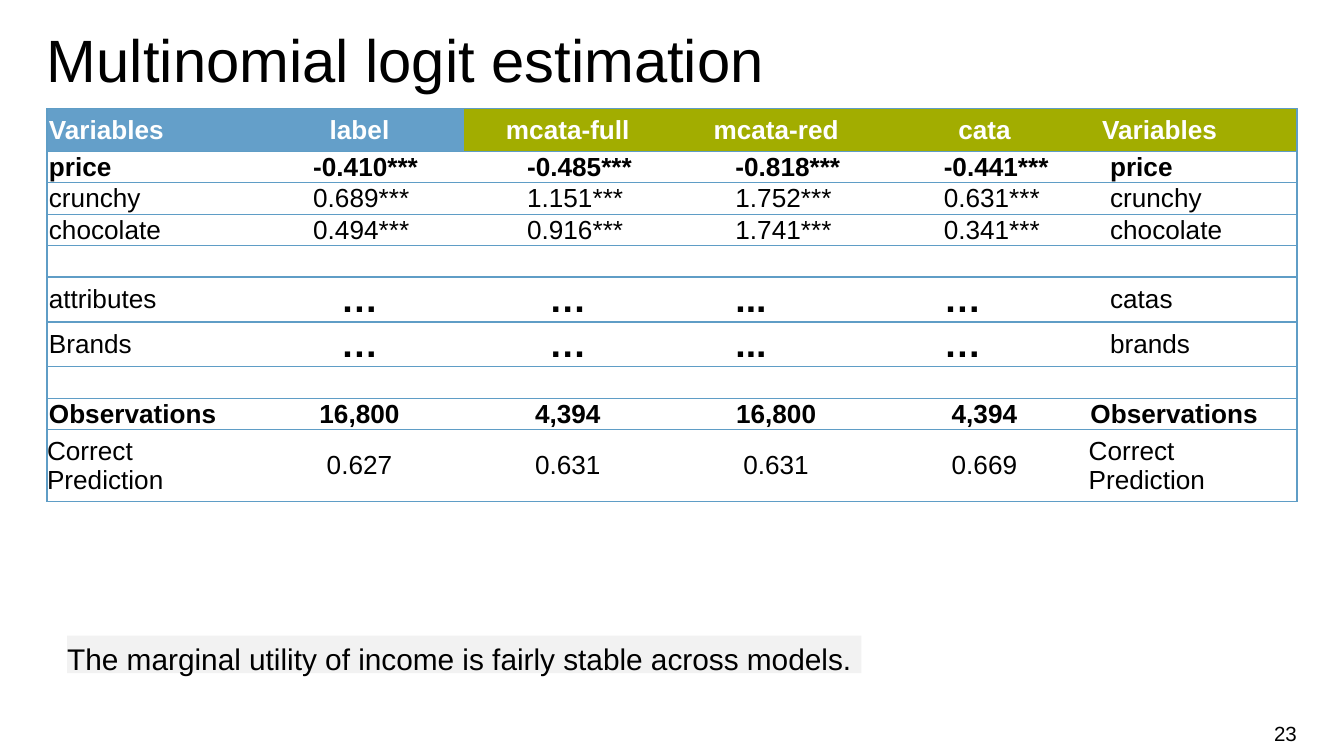
from dataclasses import dataclass

from lxml import etree
from pptx import Presentation
from pptx.dml.color import RGBColor
from pptx.enum.shapes import MSO_SHAPE
from pptx.enum.text import MSO_ANCHOR, PP_ALIGN
from pptx.oxml.ns import qn
from pptx.util import Pt

LEFT, MID, RIGHT = PP_ALIGN.LEFT, PP_ALIGN.CENTER, PP_ALIGN.RIGHT
TOP, CENTRE = MSO_ANCHOR.TOP, MSO_ANCHOR.MIDDLE
RECT = MSO_SHAPE.RECTANGLE


@dataclass(frozen=True)
class Theme:
    font: str = "Arial"
    ink: str = "000000"
    white: str = "FFFFFF"
    blue: str = "649FC9"
    green: str = "A2AD00"
    rule: str = "5F9DC6"
    pale: str = "F2F2F2"
    title: float = 32
    note: float = 16
    body: float = 14
    dots: float = 20
    page: float = 11
    line: float = 0.75


THEME = Theme()

# Column layouts: a left inset in points, or MID for centred text
HEAD = (1, MID, MID, MID, MID, 7.2)
COEF = (1, 31, 34, 34, 34, 11.5)
DOTS = (1, MID, MID, 34, 34, 11.5)
TOTAL = (1, MID, MID, MID, MID, 1)
FIT = (0, MID, MID, MID, MID, 0)

# Each row: height, layout, bold, texts
TALL, LOW, DOUBLE = 22.8, 16.2, 38.6
GAP = (LOW, TOTAL, False, [""] * 6)
ROWS = [
    (TALL, HEAD, True,
     ["Variables", "label", "mcata-full", "mcata-red", "cata", "Variables"]),
    (LOW, COEF, True,
     ["price", "-0.410***", "-0.485***", "-0.818***", "-0.441***", "price"]),
    (LOW, COEF, False,
     ["crunchy", "0.689***", "1.151***", "1.752***", "0.631***", "crunchy"]),
    (LOW, COEF, False,
     ["chocolate", "0.494***", "0.916***", "1.741***", "0.341***", "chocolate"]),
    GAP,
    (TALL, DOTS, False, ["attributes", "…", "…", "...", "…", "catas"]),
    (TALL, DOTS, False, ["Brands", "…", "…", "...", "…", "brands"]),
    GAP,
    (LOW, TOTAL, True,
     ["Observations", "16,800", "4,394", "16,800", "4,394", "Observations"]),
    (DOUBLE, FIT, False,
     ["Correct Prediction", "0.627", "0.631", "0.631", "0.669",
      "Correct Prediction"]),
]


def rgb(code):
    return RGBColor.from_string(code)


def write(frame, text, size, color=THEME.ink, bold=False, align=LEFT,
          anchor=TOP):
    frame.word_wrap = True
    frame.vertical_anchor = anchor
    frame.margin_left = frame.margin_right = 0
    frame.margin_top = frame.margin_bottom = 0
    frame.text = text
    para = frame.paragraphs[0]
    para.alignment = align
    for run in para.runs:
        font = run.font
        font.name, font.size, font.bold = THEME.font, Pt(size), bold
        font.color.rgb = rgb(color)
    return para


def add_title(slide, x, y, w, h):
    box = slide.shapes.add_textbox(Pt(x), Pt(y), Pt(w), Pt(h))
    para = write(box.text_frame, "Multinomial logit estimation", THEME.title)
    para.line_spacing = Pt(THEME.title)


def set_rules(cell, first, last):
    """Rule above and below each cell, and at the two outer sides."""
    props = cell._tc.get_or_add_tcPr()
    for side, shown in (("L", first), ("R", last), ("T", True), ("B", True)):
        line = etree.SubElement(props, qn(f"a:ln{side}"),
                                w=str(Pt(THEME.line)))
        if shown:
            fill = etree.SubElement(line, qn("a:solidFill"))
            etree.SubElement(fill, qn("a:srgbClr"), val=THEME.rule)
        else:
            etree.SubElement(line, qn("a:noFill"))


def fill_cell(cell, text, place, size, color, bold):
    centred = place is MID
    para = write(cell.text_frame, text, size, color, bold,
                 MID if centred else LEFT)
    cell.vertical_anchor = CENTRE
    cell.margin_left = Pt(1 if centred else place)
    cell.margin_right = Pt(1)
    cell.margin_top = cell.margin_bottom = 0
    if not text:
        # Keeps an empty row as low as a line of body text
        etree.SubElement(para._p, qn("a:endParaRPr"), sz=str(int(size * 100)))


def add_results(slide, x, y, w):
    count = len(HEAD)
    high = sum(row[0] for row in ROWS)
    table = slide.shapes.add_table(len(ROWS), count, Pt(x), Pt(y), Pt(w),
                                   Pt(high)).table
    table.first_row = table.horz_banding = False
    for col in table.columns:
        col.width = Pt(w / count)
    for r, (height, layout, bold, texts) in enumerate(ROWS):
        table.rows[r].height = Pt(height)
        for c, (text, place) in enumerate(zip(texts, layout)):
            cell = table.cell(r, c)
            dots = layout is DOTS and 0 < c < count - 1
            fill_cell(cell, text, place, THEME.dots if dots else THEME.body,
                      THEME.white if r == 0 else THEME.ink, bold or dots)
            set_rules(cell, c == 0, c == count - 1)
            if r == 0:
                cell.fill.solid()
                cell.fill.fore_color.rgb = rgb(
                    THEME.blue if c < 2 else THEME.green)
            else:
                cell.fill.background()


def add_note(slide, x, y, w, h):
    box = slide.shapes.add_shape(RECT, Pt(x), Pt(y), Pt(w), Pt(h))
    box.shadow.inherit = False
    box.fill.solid()
    box.fill.fore_color.rgb = rgb(THEME.pale)
    box.line.fill.background()
    para = write(
        box.text_frame,
        "The marginal utility of income is fairly stable across models.",
        THEME.note)
    para.line_spacing = 1.14


def add_page(slide, x, y, w, h):
    box = slide.shapes.add_textbox(Pt(x), Pt(y), Pt(w), Pt(h))
    write(box.text_frame, "23", THEME.page, align=RIGHT, anchor=CENTRE)


def main():
    deck = Presentation()
    deck.slide_width, deck.slide_height = Pt(720), Pt(405)
    slide = deck.slides.add_slide(deck.slide_layouts[6])
    edge, wide = 25.2, 669.6
    add_page(slide, 533.5, 382.3, 161.3, 21.6)
    add_results(slide, edge, 58.3, wide)
    add_title(slide, edge, 18.7, wide, 32.4)
    add_note(slide, 36, 340.5, 425.5, 20.2)
    deck.save("out.pptx")


if __name__ == "__main__":
    main()
